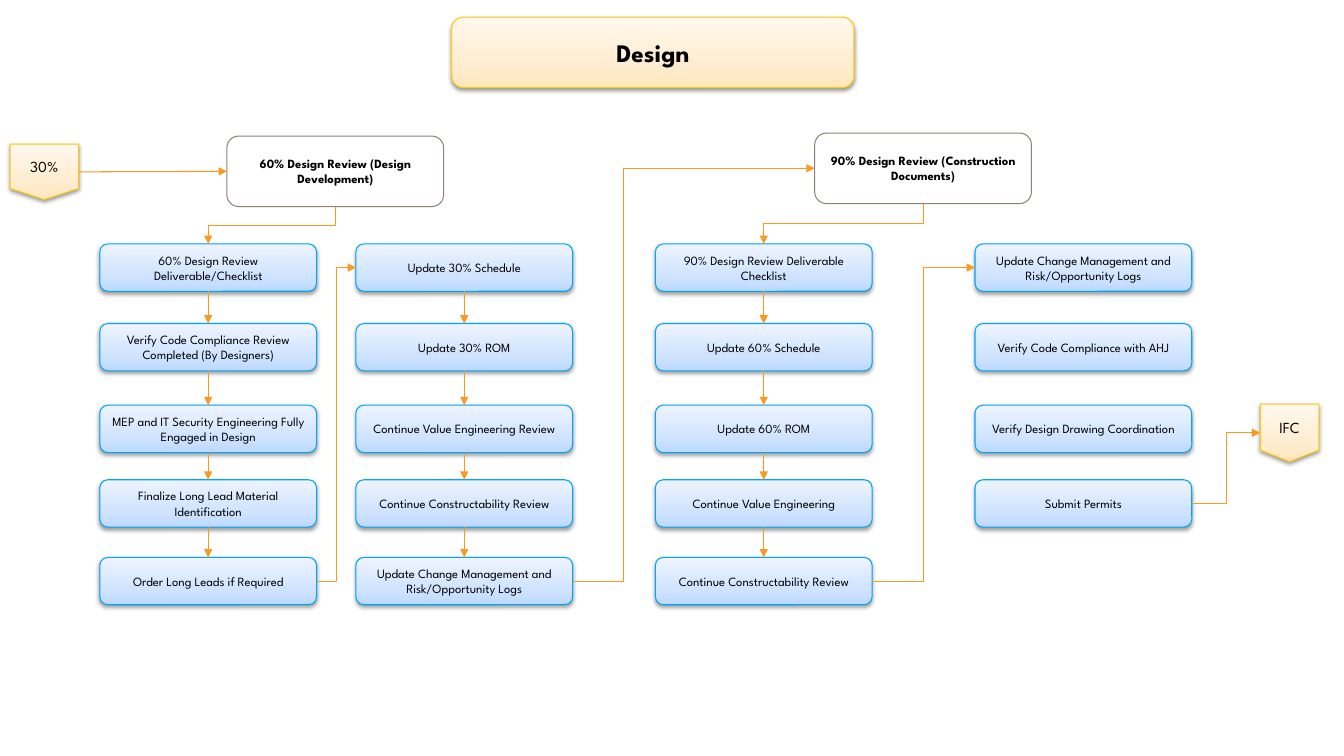
from lxml import etree
from pptx import Presentation
from pptx.dml.color import RGBColor as Rgb
from pptx.enum.shapes import MSO_CONNECTOR as Link, MSO_SHAPE as Kind
from pptx.enum.text import MSO_ANCHOR as Anchor, PP_ALIGN as Align
from pptx.oxml import parse_xml
from pptx.oxml.ns import nsdecls, qn
from pptx.util import Inches, Pt

COLORS = {"text": "000000", "gold": "FFC808", "blue": "00A4F9",
          "gray": "8B8376", "arrow": "FF9820"}
FADES = {"gold": ("FFE6BD", "FFEDD1", "FFF8EE"),
         "blue": ("BDD9FF", "D1E4FF", "EEF4FF")}
STOPS = (0, 35, 100)

STEP = {"size": Pt(9), "bold": False}
HEAD = {"size": Pt(9), "bold": True}
TITLE = {"size": Pt(18), "bold": True}
TAG = {"size": Pt(11), "bold": False}

COLUMNS = [
    (0.99, ["60% Design Review Deliverable/Checklist",
            "Verify Code Compliance Review Completed (By Designers)",
            "MEP and IT Security Engineering Fully Engaged in Design",
            "Finalize Long Lead Material Identification",
            "Order Long Leads if Required"]),
    (3.53, ["Update 30% Schedule",
            "Update 30% ROM",
            "Continue Value Engineering Review",
            "Continue Constructability Review",
            "Update Change Management and Risk/Opportunity Logs"]),
    (6.5, ["90% Design Review Deliverable Checklist",
           "Update 60% Schedule",
           "Update 60% ROM",
           "Continue Value Engineering",
           "Continue Constructability Review"]),
    (9.67, ["Update Change Management and Risk/Opportunity Logs",
            "Verify Code Compliance with AHJ",
            "Verify Design Drawing Coordination",
            "Submit Permits"]),
]
ROWS = (2.42, 3.21, 4.02, 4.76, 5.53)
WIDE, HIGH, TALL = 2.15, 0.47, 0.7
TOP, LEFT, BOTTOM, RIGHT = range(4)

deck = Presentation()
deck.slide_width, deck.slide_height = Inches(13.33), Inches(7.5)
slide = deck.slides.add_slide(deck.slide_layouts[6])


def shade(box, tone):
    stops = "".join(
        f'<a:gs pos="{pos * 1000}"><a:srgbClr val="{hue}"/></a:gs>'
        for pos, hue in zip(STOPS, FADES[tone]))
    props = box._element.spPr
    props.insert(2, parse_xml(
        f'<a:gradFill {nsdecls("a")} rotWithShape="1"><a:gsLst>{stops}</a:gsLst>'
        '<a:lin ang="16200000" scaled="0"/></a:gradFill>'))
    props.find(qn("a:effectLst")).append(parse_xml(
        f'<a:outerShdw {nsdecls("a")} blurRad="{Pt(3.1)}" dist="{Pt(1.6)}" '
        'dir="5400000" rotWithShape="0"><a:srgbClr val="000000">'
        '<a:alpha val="38000"/></a:srgbClr></a:outerShdw>'))


def add_box(text, place, tone, style, kind=Kind.ROUNDED_RECTANGLE):
    box = slide.shapes.add_shape(kind, *map(Inches, place))
    box.shadow.inherit = False
    box.line.color.rgb = Rgb.from_string(COLORS[tone])
    box.line.width = Pt(0.75)
    if tone in FADES:
        shade(box, tone)
    else:
        box.fill.background()
    frame = box.text_frame
    frame.word_wrap = True
    frame.vertical_anchor = Anchor.MIDDLE
    para = frame.paragraphs[0]
    para.alignment = Align.CENTER
    run = para.add_run()
    run.text = text
    for name, value in {"name": "League Spartan", **style}.items():
        setattr(run.font, name, value)
    run.font.color.rgb = Rgb.from_string(COLORS["text"])
    return box


def turn(line):
    mid_x = (line.begin_x + line.end_x) // 2
    mid_y = (line.begin_y + line.end_y) // 2
    half_w = abs(line.end_y - line.begin_y) // 2
    half_h = abs(line.end_x - line.begin_x) // 2
    line.begin_x, line.end_x = mid_x - half_w, mid_x + half_w
    line.begin_y, line.end_y = mid_y - half_h, mid_y + half_h
    line._element.spPr.find(qn("a:xfrm")).set("rot", "5400000")


def join(start, out, end, into, kind=Link.STRAIGHT, bend=None):
    line = slide.shapes.add_connector(kind, 0, 0, 0, 0)
    line.begin_connect(start, out)
    line.end_connect(end, into)
    line.line.color.rgb = Rgb.from_string(COLORS["arrow"])
    line.line.width = Pt(0.75)
    props = line._element.spPr
    etree.SubElement(props.find(qn("a:ln")), qn("a:tailEnd"), type="triangle")
    etree.SubElement(props, qn("a:effectLst"))
    if kind == Link.ELBOW and out == BOTTOM:
        turn(line)
    if bend:
        guides = props.find(qn("a:prstGeom")).get_or_add_avLst()
        etree.SubElement(guides, qn("a:gd"), name="adj1",
                         fmla=f"val {round(bend * 100000)}")


add_box("Design", (4.48, 0.17, 3.99, TALL), "gold", TITLE)
mid = add_box("60% Design Review (Design Development)",
              (2.25, 1.35, WIDE, TALL), "gray", HEAD)
late = add_box("90% Design Review (Construction Documents)",
               (8.08, 1.32, WIDE, TALL), "gray", HEAD)
entry = add_box("30%", (0.1, 1.43, 0.68, 0.55), "gold", TAG,
                Kind.FLOWCHART_OFFPAGE_CONNECTOR)
leave = add_box("IFC", (12.5, 4.01, 0.58, 0.57), "gold", TAG,
                Kind.FLOWCHART_OFFPAGE_CONNECTOR)

steps = [[add_box(text, (x, y, WIDE, HIGH), "blue", STEP)
          for text, y in zip(texts, ROWS)] for x, texts in COLUMNS]
one, two, three, four = steps

for chain in (one, two, three):
    for upper, lower in zip(chain, chain[1:]):
        join(upper, BOTTOM, lower, TOP)

join(entry, RIGHT, mid, LEFT)
for head, chain in ((mid, one), (late, three)):
    join(head, BOTTOM, chain[0], TOP, Link.ELBOW)
for start, end, bend in ((one[-1], two[0], 0.5), (two[-1], late, 0.21),
                         (three[-1], four[0], 0.5), (four[-1], leave, 0.5)):
    join(start, RIGHT, end, LEFT, Link.ELBOW, bend)

deck.save("out.pptx")
